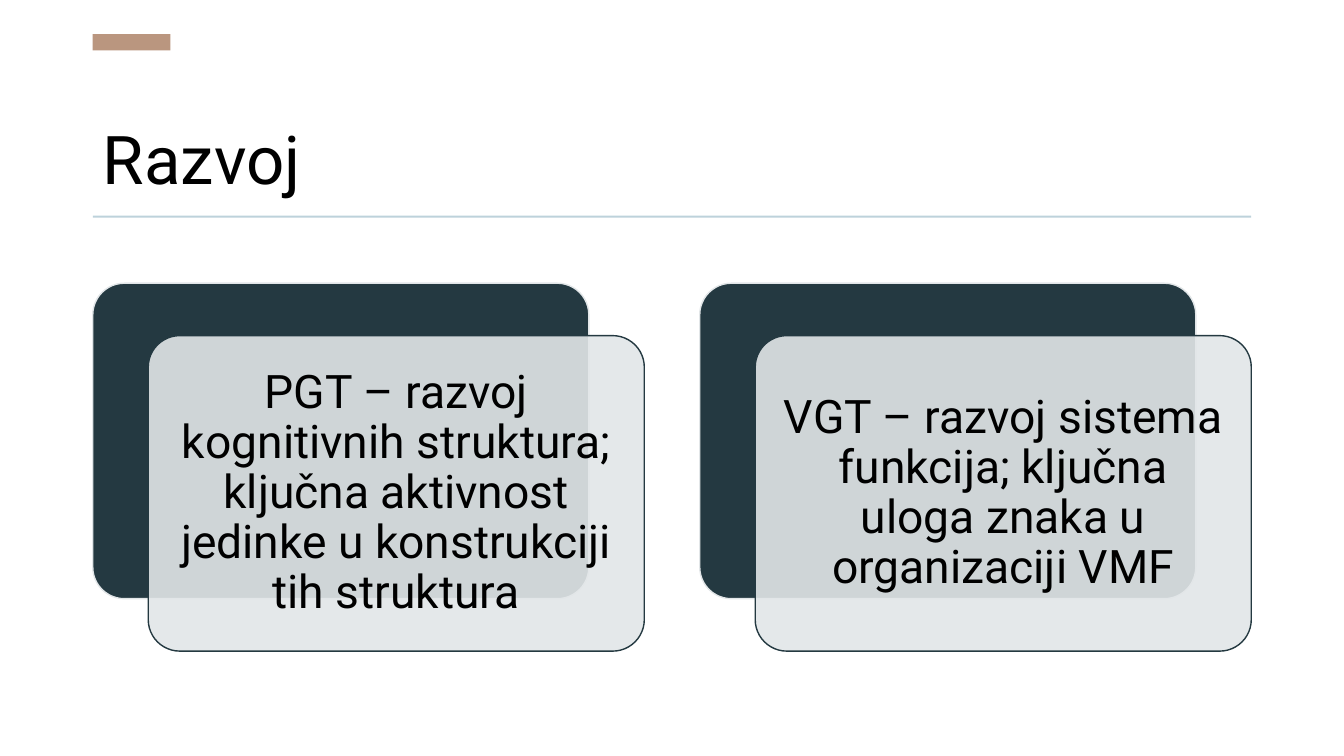
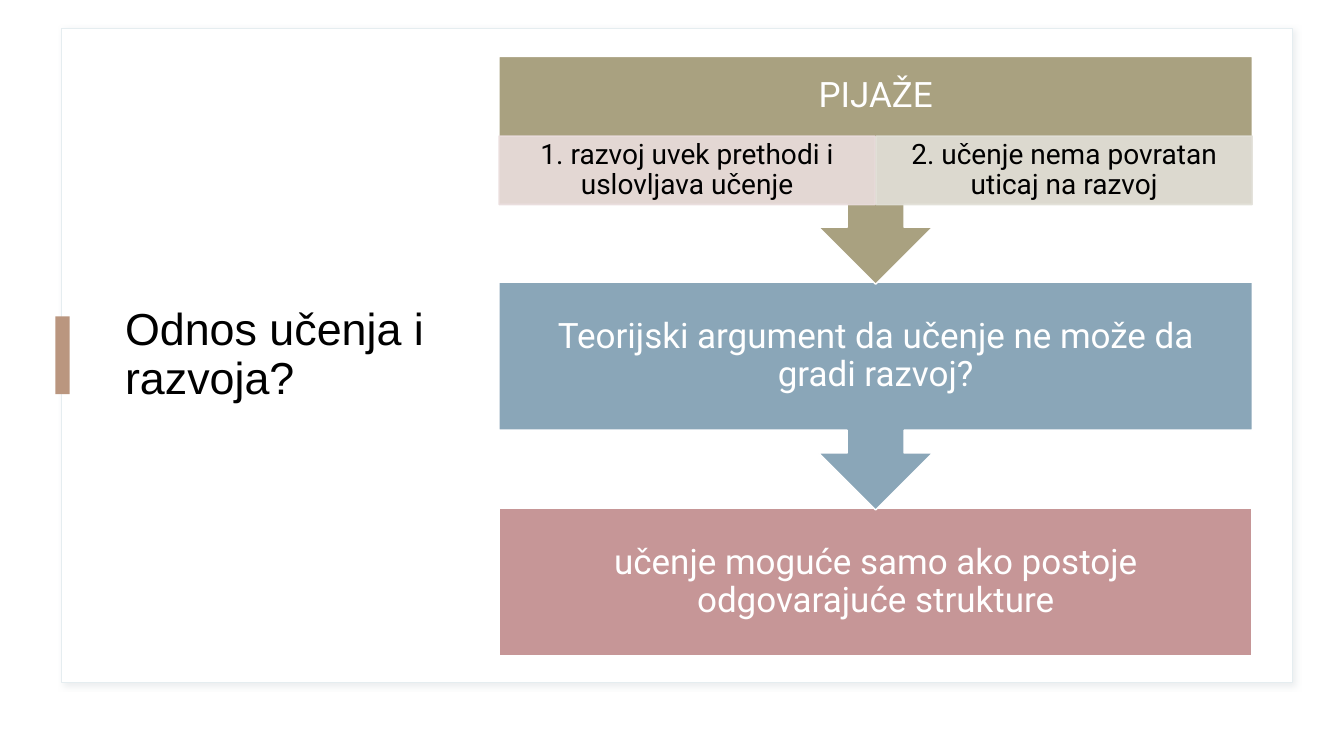
from lxml import etree
from pptx import Presentation
from pptx.dml.color import RGBColor
from pptx.enum.shapes import MSO_SHAPE
from pptx.enum.text import MSO_ANCHOR, MSO_AUTO_SIZE, PP_ALIGN
from pptx.oxml.ns import qn
from pptx.util import Emu, Pt

RECT = MSO_SHAPE.RECTANGLE
ROUNDED = MSO_SHAPE.ROUNDED_RECTANGLE
CALLOUT = MSO_SHAPE.DOWN_ARROW_CALLOUT
MIDDLE, BOTTOM = MSO_ANCHOR.MIDDLE, MSO_ANCHOR.BOTTOM
LEFT, CENTER = PP_ALIGN.LEFT, PP_ALIGN.CENTER
NO_FIT = MSO_AUTO_SIZE.NONE
TITLE_ONLY = 5
EMU_PER_PX = 9144
COLORS = {
    "black": "000000", "white": "FFFFFF", "accent": "BA967F", "rule": "BDD2DB",
    "dark": "243941", "pale": "E2E6E8", "frame": "E5EDF0", "shadow": "BCC5CA",
    "rose": "C69697", "blue": "8AA6B8", "olive": "A9A180",
    "pale_rose": "EADDDD", "pale_olive": "E2E0D8",
}


def px(length):
    return Emu(length * EMU_PER_PX)


class Deck:
    """Holds the shared style and the slide being built."""

    def __init__(self, width, height):
        self.prs = Presentation()
        self.prs.slide_width, self.prs.slide_height = px(width), px(height)
        self.slide = None

    def add_slide(self, title, box, size, font, anchor):
        self.slide = self.prs.slides.add_slide(self.prs.slide_layouts[TITLE_ONLY])
        heading = self.slide.shapes.title
        for name, length in zip(("left", "top", "width", "height"), box):
            setattr(heading, name, px(length))
        self.label(heading, title, size, font=font, anchor=anchor, align=LEFT, insets=(10, 5, 10, 5))

    def label(self, shape, text, size, color="black", font="Roboto",
              anchor=MIDDLE, align=CENTER, insets=(14, 14, 14, 14)):
        frame = shape.text_frame
        frame.text = text
        paragraph = frame.paragraphs[0]
        sides = ("margin_left", "margin_top", "margin_right", "margin_bottom")
        formats = (
            (frame, {"word_wrap": True, "auto_size": NO_FIT, "vertical_anchor": anchor,
                     **dict(zip(sides, map(px, insets)))}),
            (paragraph, {"alignment": align, "line_spacing": 0.9}),
            (paragraph.runs[0].font, {"name": font, "size": Pt(size)}),
        )
        for target, values in formats:
            for name, value in values.items():
                setattr(target, name, value)
        paragraph.runs[0].font.color.rgb = RGBColor.from_string(COLORS[color])

    def set_alpha(self, paint, percent):
        color = next(paint.iter(qn("a:srgbClr")))
        etree.SubElement(color, qn("a:alpha"), val=str(percent * 1000))

    def panel(self, kind, box, fill, line=None, fill_alpha=100, line_alpha=100):
        shape = self.slide.shapes.add_shape(kind, *map(px, box))
        shape.shadow.inherit = False
        shape.fill.solid()
        shape.fill.fore_color.rgb = RGBColor.from_string(COLORS[fill])
        properties = shape._element.spPr
        if fill_alpha < 100:
            self.set_alpha(properties.find(qn("a:solidFill")), fill_alpha)
        if line is None:
            shape.line.fill.background()
            return shape
        shape.line.color.rgb = RGBColor.from_string(COLORS[line])
        shape.line.width = Pt(1)
        if line_alpha < 100:
            self.set_alpha(properties.find(qn("a:ln")), line_alpha)
        return shape

    def accent(self, box):
        self.panel(RECT, box, "accent")

    def backdrop(self, box):
        frame = self.panel(RECT, box, "white", "frame")
        effects = frame._element.spPr.find(qn("a:effectLst"))
        shadow = etree.SubElement(effects, qn("a:outerShdw"), blurRad=str(Pt(4)),
                                  dist=str(Pt(3)), dir=str(45 * 60000))
        etree.SubElement(shadow, qn("a:srgbClr"), val=COLORS["shadow"])
        self.set_alpha(shadow, 30)
        self.slide.shapes.title._element.addprevious(frame._element)

    def card(self, left, top, text):
        width, height = 492, 313
        back = self.panel(ROUNDED, (left, top, width, height), "dark", "pale")
        front = self.panel(ROUNDED, (left + 55, top + 52, width, height), "pale", "dark", fill_alpha=90)
        for sheet in (back, front):
            sheet.adjustments[0] = 0.1
        self.label(front, text, 33)

    def step(self, kind, box, fill, text, below=0):
        block = self.panel(kind, box, fill, "white")
        self.label(block, text, 25, "white", insets=(19, 19, 19, 19 + below))

    def claim(self, box, fill, text):
        cell = self.panel(RECT, box, fill, fill, fill_alpha=90, line_alpha=90)
        self.label(cell, text, 20, insets=(16, 3, 16, 3))


def build_development(deck):
    deck.add_slide("Razvoj", (92, 75, 1149, 127), 48, "Roboto", BOTTOM)
    deck.accent((92, 34, 77, 16))
    deck.panel(RECT, (92, 214, 1149, 2), "rule")
    theories = (
        "PGT – razvoj kognitivnih struktura; ključna aktivnost jedinke u konstrukciji tih struktura",
        "VGT – razvoj sistema funkcija; ključna uloga znaka u organizaciji VMF",
    )
    for index, theory in enumerate(theories):
        deck.card(92 + index * 602, 281, theory)


def build_learning(deck):
    deck.add_slide("Odnos učenja i razvoja?", (114, 55, 327, 595), 32, "Arial", MIDDLE)
    deck.backdrop((61, 28, 1221, 649))
    deck.accent((55, 314, 14, 77))
    left, top, width, pitch = 495, 56, 747, 224
    claim_height = 68
    steps = (
        (CALLOUT, 226, "olive", "PIJAŽE", claim_height),
        (CALLOUT, 226, "blue", "Teorijski argument da učenje ne može da gradi razvoj?", 0),
        (RECT, 147, "rose", "učenje moguće samo ako postoje odgovarajuće strukture", 0),
    )
    for index, (kind, height, fill, text, below) in reversed(list(enumerate(steps))):
        deck.step(kind, (left, top + index * pitch, width, height), fill, text, below)
    claims = (
        ("pale_rose", "1. razvoj uvek prethodi i uslovljava učenje"),
        ("pale_olive", "2. učenje nema povratan uticaj na razvoj"),
    )
    for index, (fill, text) in enumerate(claims):
        deck.claim((left + index * 374, top + 79, 373, claim_height), fill, text)


def main():
    deck = Deck(1333, 750)
    build_development(deck)
    build_learning(deck)
    deck.prs.save("out.pptx")


if __name__ == "__main__":
    main()
